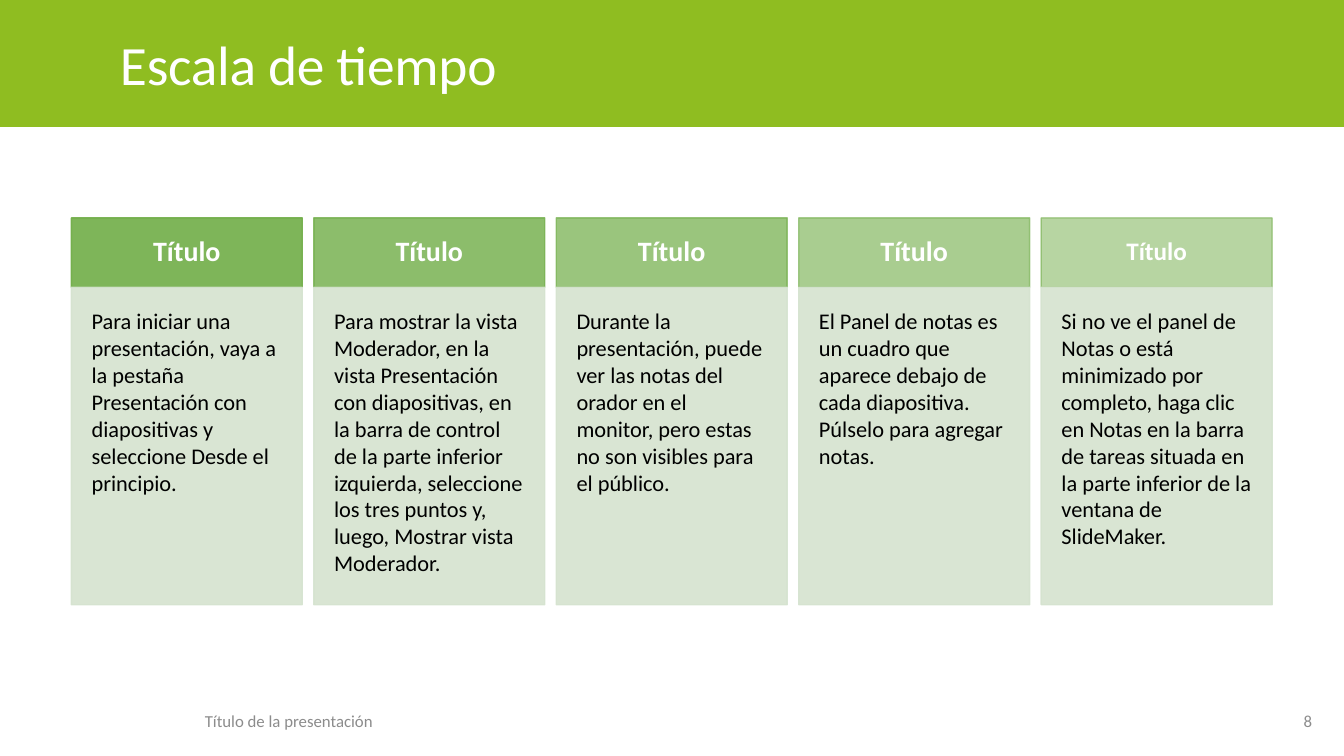
from pptx import Presentation
from pptx.dml.color import RGBColor
from pptx.enum.shapes import MSO_SHAPE
from pptx.enum.text import MSO_ANCHOR, MSO_AUTO_SIZE, PP_ALIGN
from pptx.oxml.ns import qn
from pptx.util import Cm, Pt

RECT = MSO_SHAPE.RECTANGLE
TOP, MIDDLE = MSO_ANCHOR.TOP, MSO_ANCHOR.MIDDLE
LEFT, CENTER, RIGHT = PP_ALIGN.LEFT, PP_ALIGN.CENTER, PP_ALIGN.RIGHT
NO_FIT = MSO_AUTO_SIZE.NONE

LIME, GREEN, PALE = "8FBD21", "70AD47", "D5E3CF"
WHITE, BLACK, GRAY = "FFFFFF", "000000", "8C8C8C"

# Heading size and text of each step
STEPS = [
    (20, "Para iniciar una presentación, vaya a la pestaña Presentación con "
         "diapositivas y seleccione Desde el principio."),
    (20, "Para mostrar la vista Moderador, en la vista Presentación con "
         "diapositivas, en la barra de control de la parte inferior izquierda, "
         "seleccione los tres puntos y, luego, Mostrar vista Moderador."),
    (20, "Durante la presentación, puede ver las notas del orador en el "
         "monitor, pero estas no son visibles para el público."),
    (20, "El Panel de notas es un cuadro que aparece debajo de cada "
         "diapositiva. Púlselo para agregar notas."),
    (18, "Si no ve el panel de Notas o está minimizado por completo, haga clic "
         "en Notas en la barra de tareas situada en la parte inferior de la "
         "ventana de SlideMaker."),
]


def color(code):
    return RGBColor.from_string(code)


class Deck:
    font = "Calibri"

    def __init__(self):
        self.prs = Presentation()
        self.prs.slide_width, self.prs.slide_height = Cm(33.87), Cm(19.05)
        self.slide = self.prs.slides.add_slide(self.prs.slide_layouts[5])

    def put_text(self, shape, text, size, ink, align=LEFT, anchor=MIDDLE,
                 bold=False, inset=None, space=1.0):
        frame = shape.text_frame
        frame.text = text
        frame.word_wrap = True
        frame.auto_size = NO_FIT
        frame.vertical_anchor = anchor
        if inset is not None:
            frame.margin_left = frame.margin_right = Cm(inset)
            frame.margin_top = frame.margin_bottom = Cm(inset)
        para = frame.paragraphs[0]
        para.alignment, para.line_spacing = align, space
        font = para.font
        font.name, font.size, font.bold = self.font, Pt(size), bold
        font.color.rgb = color(ink)

    def title(self, text, x, y, w, h):
        shape = self.slide.shapes.title
        shape.left, shape.top, shape.width, shape.height = map(Cm, (x, y, w, h))
        self.put_text(shape, text, 39.6, WHITE)
        run = shape.text_frame.paragraphs[0].runs[0]
        run._r.get_or_add_rPr().set("spc", "-20")

    def box(self, x, y, w, h, fill, alpha=None):
        shape = self.slide.shapes.add_shape(RECT, Cm(x), Cm(y), Cm(w), Cm(h))
        shape.shadow.inherit = False
        shape.fill.solid()
        shape.fill.fore_color.rgb = color(fill)
        if alpha is None:
            shape.line.fill.background()
            return shape
        shape.line.color.rgb = color(fill)
        shape.line.width = Pt(1)
        for node in shape._element.spPr.iter(qn("a:srgbClr")):
            tint = node.makeelement(qn("a:alpha"), {"val": str(alpha * 1000)})
            node.append(tint)
        return shape

    def band(self, h, fill):
        shape = self.box(0, 0, 33.87, h, fill)
        # Keep the band behind the title
        self.slide.shapes.title._element.addprevious(shape._element)

    def label(self, text, x, y, w, h, align):
        shape = self.slide.shapes.add_textbox(Cm(x), Cm(y), Cm(w), Cm(h))
        self.put_text(shape, text, 12, GRAY, align)

    def card(self, x, size, text, alpha):
        w = 5.82
        head = self.box(x, 5.49, w, 1.75, GREEN, alpha)
        self.put_text(head, "Título", size, WHITE, CENTER, bold=True,
                      inset=0.46, space=0.9)
        body = self.box(x, 7.24, w, 8, PALE, 90)
        self.put_text(body, text, 16, BLACK, anchor=TOP, inset=0.51)


def main():
    deck = Deck()

    # Header
    deck.band(3.2, LIME)
    deck.title("Escala de tiempo", 2.77, 0.53, 27.84, 2.11)

    # Steps, each heading paler than the last
    for i, (size, text) in enumerate(STEPS):
        deck.card(1.8 + 6.11 * i, size, text, 90 - 10 * i)

    # Footer
    deck.label("Título de la presentación", 0.56, 17.65, 13.44, 1.02, CENTER)
    deck.label("8", 31.57, 17.65, 1.75, 1.02, RIGHT)

    deck.prs.save("out.pptx")


if __name__ == "__main__":
    main()
